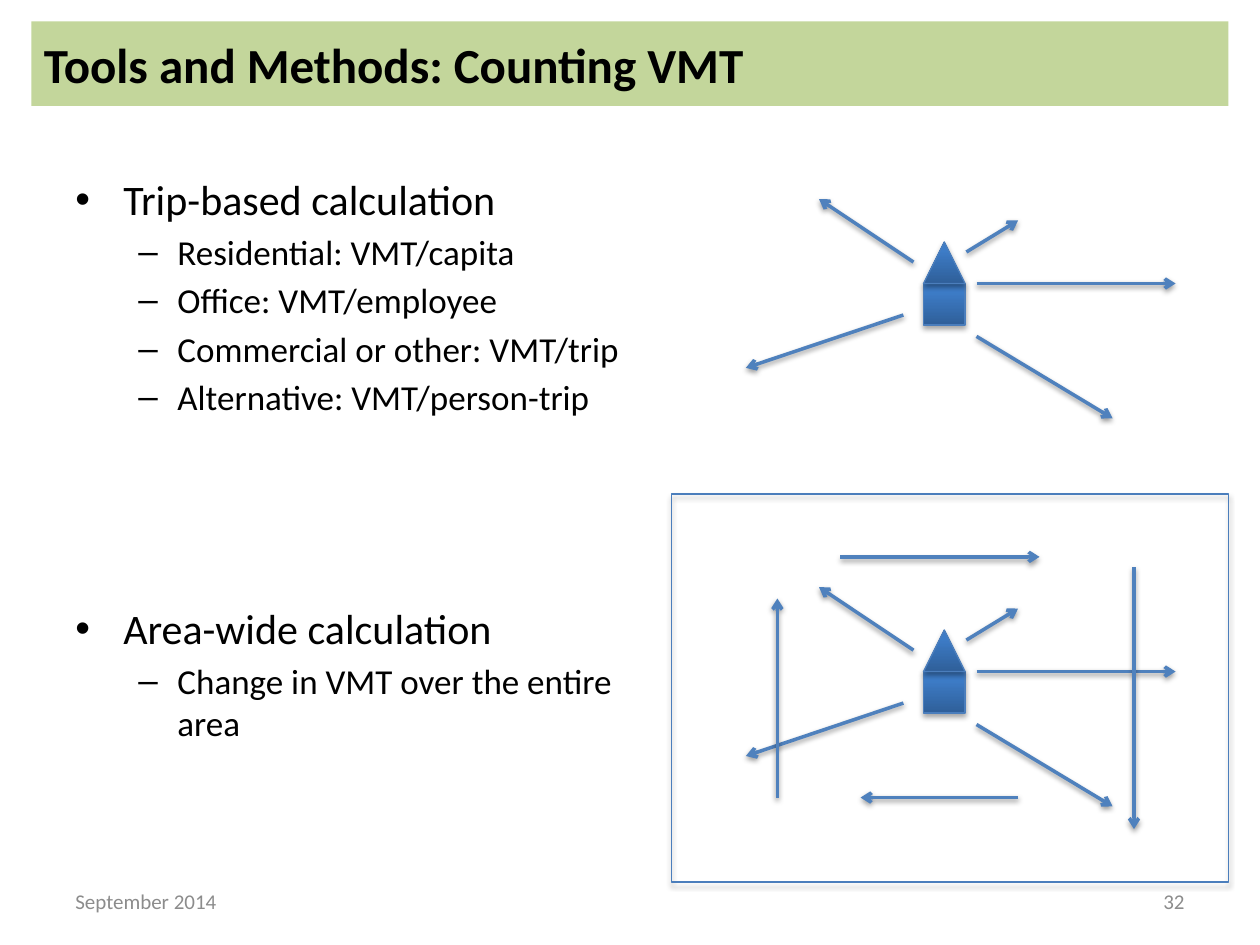
from lxml import etree
from pptx import Presentation
from pptx.dml.color import RGBColor
from pptx.enum.shapes import MSO_CONNECTOR, MSO_SHAPE
from pptx.enum.text import MSO_ANCHOR, PP_ALIGN
from pptx.oxml import parse_xml
from pptx.oxml.ns import nsdecls, qn
from pptx.util import Inches, Pt

RECTANGLE, TRIANGLE = MSO_SHAPE.RECTANGLE, MSO_SHAPE.ISOSCELES_TRIANGLE
STRAIGHT = MSO_CONNECTOR.STRAIGHT
TOP, MIDDLE = MSO_ANCHOR.TOP, MSO_ANCHOR.MIDDLE
LEFT, RIGHT = PP_ALIGN.LEFT, PP_ALIGN.RIGHT

THEME = {
    "font": "Calibri",
    "text": "000000", "muted": "8C8C8C", "banner": "C3D69B",
    "arrow": "4F81BD", "outline": "4B7EBC",
    "house_base": "2F5F99", "house_top": "3D7CC7",
    "title_size": 28, "footer_size": 12, "arrow_width": 2, "outline_width": 0.75,
}

# Content
TITLE = "Tools and Methods: Counting VMT"
DATE, PAGE_NUMBER = "September 2014", "32"
# (text, level, space before in points)
OUTLINE = [
    ("Trip-based calculation", 0, 0),
    ("Residential: VMT/capita", 1, 3.6),
    ("Office: VMT/employee", 1, 3.6),
    ("Commercial or other: VMT/trip", 1, 3.6),
    ("Alternative: VMT/person-trip", 1, 3.6),
    ("Area-wide calculation", 0, 106),
    ("Change in VMT over the entire area", 1, 3.6),
]
# Per level: bullet, type size, left margin and hanging indent in inches
LEVELS = [("•", 24, 0.38, 0.38), ("–", 20, 0.81, 0.31)]

# Diagrams: arrows as start x, start y, end x, end y
TRIP_ARROWS = [
    (7.75, 2.25, 9.33, 2.25),
    (7.67, 2.0, 8.08, 1.75),
    (7.25, 2.08, 6.5, 1.58),
    (7.17, 2.5, 5.92, 2.92),
    (7.75, 2.67, 8.83, 3.32),
]
AREA_ARROWS = [
    (6.67, 4.42, 8.25, 4.42),
    (8.08, 6.33, 6.83, 6.33),
    (6.17, 6.33, 6.17, 4.75),
    (9.0, 4.5, 9.0, 6.58),
]
HOUSE_LEFT, HOUSE_MIDDLE, HOUSE_SIZE = 7.33, 2.25, 0.33
AREA_DROP = 3.08
AREA_FRAME = (5.33, 3.92, 4.42, 3.08)


def color(name):
    return RGBColor.from_string(THEME[name])


def add_span(para, text, size, tint="text", bold=False):
    span = para.add_run()
    span.text = text
    span.font.name = THEME["font"]
    span.font.size = Pt(size)
    span.font.bold = bold
    span.font.color.rgb = color(tint)


def add_box(page, place, anchor):
    box = page.shapes.add_textbox(*map(Inches, place))
    box.text_frame.word_wrap = True
    box.text_frame.vertical_anchor = anchor
    return box


def cast_shadow(properties, distance, opacity):
    properties.append(parse_xml(
        f'<a:effectLst {nsdecls("a")}><a:outerShdw blurRad="{Pt(3.1)}" '
        f'dist="{Pt(distance)}" dir="5400000" rotWithShape="0"><a:srgbClr val="000000">'
        f'<a:alpha val="{opacity * 1000}"/></a:srgbClr></a:outerShdw></a:effectLst>'))


def add_outlined(page, kind, place):
    shape = page.shapes.add_shape(kind, *map(Inches, place))
    shape.fill.background()
    shape.line.color.rgb = color("outline")
    shape.line.width = Pt(THEME["outline_width"])
    cast_shadow(shape.element.spPr, 1.8, 35)
    return shape


def add_house(page, drop):
    middle = HOUSE_MIDDLE + drop
    for kind, top in ((RECTANGLE, middle), (TRIANGLE, middle - HOUSE_SIZE)):
        part = add_outlined(page, kind, (HOUSE_LEFT, top, HOUSE_SIZE, HOUSE_SIZE))
        part.fill.gradient()
        part.fill.gradient_angle = 90
        base, upper = part.fill.gradient_stops
        base.color.rgb, base.position = color("house_base"), 0
        upper.color.rgb, upper.position = color("house_top"), 0.8


def add_arrow(page, ends, drop=0):
    x1, y1, x2, y2 = ends
    arrow = page.shapes.add_connector(
        STRAIGHT, *map(Inches, (x1, y1 + drop, x2, y2 + drop)))
    arrow.line.color.rgb = color("arrow")
    arrow.line.width = Pt(THEME["arrow_width"])
    etree.SubElement(arrow.line._get_or_add_ln(), qn("a:tailEnd"), type="arrow")
    cast_shadow(arrow._element.spPr, 1.6, 38)


def add_outline(page):
    frame = add_box(page, (0.5, 1.33, 4.58, 5.92), TOP).text_frame
    for index, (text, level, space) in enumerate(OUTLINE):
        para = frame.add_paragraph() if index else frame.paragraphs[0]
        bullet, size, margin, hang = LEVELS[level]
        para.level = level
        para.space_before = Pt(space)
        properties = para._p.get_or_add_pPr()
        properties.set("marL", str(Inches(margin)))
        properties.set("indent", str(-Inches(hang)))
        etree.SubElement(properties, qn("a:buFont"), typeface="Arial")
        etree.SubElement(properties, qn("a:buChar"), char=bullet)
        add_span(para, text, size)


def add_banner(page):
    banner = page.shapes.add_shape(RECTANGLE, *map(Inches, (0.25, 0.17, 9.5, 0.67)))
    banner.shadow.inherit = False
    banner.fill.solid()
    banner.fill.fore_color.rgb = color("banner")
    banner.line.fill.background()
    banner.text_frame.vertical_anchor = MIDDLE
    para = banner.text_frame.paragraphs[0]
    para.alignment = LEFT
    add_span(para, TITLE, THEME["title_size"], bold=True)


def main():
    deck = Presentation()
    deck.slide_width, deck.slide_height = Inches(10), Inches(7.5)
    page = deck.slides.add_slide(deck.slide_layouts[6])

    # Text
    add_outline(page)
    add_banner(page)

    # The same trips, alone and then within the area
    for drop in (0, AREA_DROP):
        add_house(page, drop)
        for ends in TRIP_ARROWS:
            add_arrow(page, ends, drop)
    for ends in AREA_ARROWS:
        add_arrow(page, ends)
    add_outlined(page, RECTANGLE, AREA_FRAME)

    # Footer
    for text, left, alignment in ((DATE, 0.5, LEFT), (PAGE_NUMBER, 7.17, RIGHT)):
        para = add_box(page, (left, 6.95, 2.33, 0.4), MIDDLE).text_frame.paragraphs[0]
        para.alignment = alignment
        add_span(para, text, THEME["footer_size"], "muted")

    deck.save("out.pptx")


if __name__ == "__main__":
    main()
